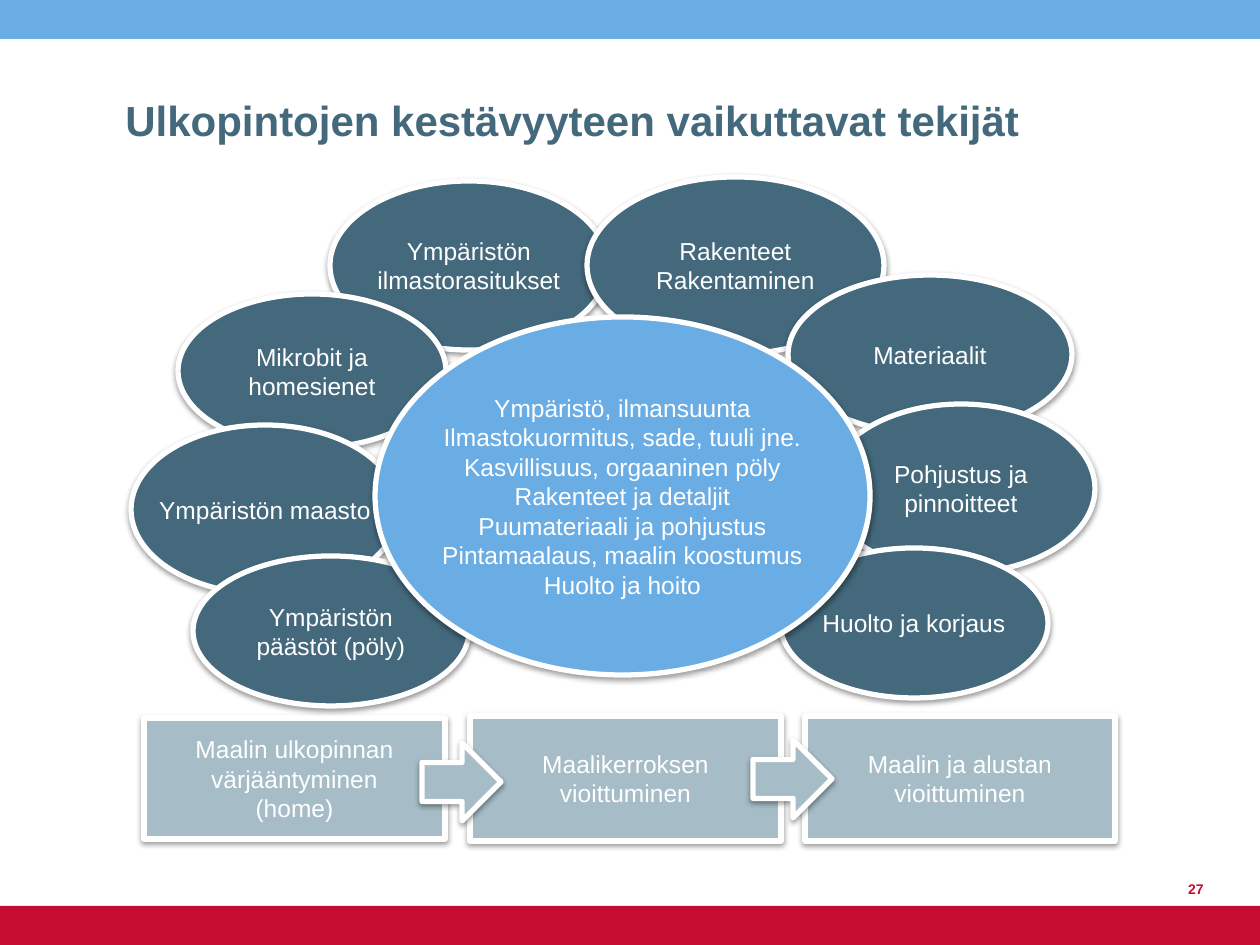
from lxml import etree
from pptx import Presentation
from pptx.dml.color import RGBColor
from pptx.enum.shapes import MSO_SHAPE
from pptx.enum.text import MSO_ANCHOR, PP_ALIGN
from pptx.oxml import parse_xml
from pptx.util import Emu, Pt

RECT, OVAL, ARROW = MSO_SHAPE.RECTANGLE, MSO_SHAPE.OVAL, MSO_SHAPE.RIGHT_ARROW
LEFT, CENTER, RIGHT = PP_ALIGN.LEFT, PP_ALIGN.CENTER, PP_ALIGN.RIGHT
MIDDLE, BOTTOM = MSO_ANCHOR.MIDDLE, MSO_ANCHOR.BOTTOM

PX = 914400 / 126
THEME = {
    "font": "Arial",
    "sky": RGBColor(0x6A, 0xAD, 0xE4),
    "red": RGBColor(0xC6, 0x0C, 0x30),
    "slate": RGBColor(0x44, 0x69, 0x7D),
    "mist": RGBColor(0xA6, 0xBC, 0xC6),
    "white": RGBColor(0xFF, 0xFF, 0xFF),
    "title": 24,
    "body": 14,
    "number": 8,
    "outline": 3,
}
SHADOW = (
    '<a:outerShdw xmlns:a="http://schemas.openxmlformats.org/drawingml/2006/main"'
    ' blurRad="40000" dist="20000" dir="5400000" rotWithShape="0">'
    '<a:srgbClr val="000000"><a:alpha val="38000"/></a:srgbClr></a:outerShdw>'
)

prs = Presentation()
prs.slide_width, prs.slide_height = Emu(round(1260 * PX)), Emu(round(945 * PX))
slide = prs.slides.add_slide(prs.slide_layouts[6])


def write(shape, text, size=THEME["body"], color=THEME["white"], bold=False,
          align=CENTER, anchor=MIDDLE, wrap=False):
    frame = shape.text_frame
    frame.word_wrap = wrap
    frame.vertical_anchor = anchor
    frame.text = text
    for paragraph in frame.paragraphs:
        paragraph.alignment = align
        for run in paragraph.runs:
            run.font.name = THEME["font"]
            run.font.size = Pt(size)
            run.font.bold = bold
            run.font.color.rgb = color


def add_block(kind, box, fill, raised=True):
    shape = slide.shapes.add_shape(kind, *(Emu(round(n * PX)) for n in box))
    shape.fill.solid()
    shape.fill.fore_color.rgb = fill
    shape.shadow.inherit = False
    if raised:
        shape.line.color.rgb = THEME["white"]
        shape.line.width = Pt(THEME["outline"])
        effects = next(shape.element.spPr.iter("{*}effectLst"))
        effects.append(parse_xml(SHADOW))
    else:
        shape.line.fill.background()
    return shape


# Bands at the top and bottom edges
for top, color in ((0, THEME["sky"]), (906, THEME["red"])):
    add_block(RECT, (0, top, 1260, 39), color, raised=False)

# Title and page number
labels = (
    ((113, 45, 1032, 149), "Ulkopintojen kestävyyteen vaikuttavat tekijät",
     THEME["title"], THEME["slate"], LEFT, MIDDLE),
    ((1147, 854, 69, 50), "27", THEME["number"], THEME["red"], RIGHT, BOTTOM),
)
for box, text, size, color, align, anchor in labels:
    label = slide.shapes.add_textbox(*(Emu(round(n * PX)) for n in box))
    write(label, text, size=size, color=color, bold=True, align=align,
          anchor=anchor, wrap=True)

# Stages of damage
stages = (
    ((144, 718, 301, 121), "Maalin ulkopinnan\nvärjääntyminen\v(home)"),
    ((470, 716, 311, 125), "Maalikerroksen\nvioittuminen"),
    ((805, 716, 310, 125), "Maalin ja alustan\nvioittuminen"),
)
for box, text in stages:
    write(add_block(RECT, box, THEME["mist"]), text)

# Factors around the centre
factors = (
    ((330, 181, 278, 169), "Ympäristön\nilmastorasitukset"),
    ((587, 177, 297, 177), "Rakenteet\nRakentaminen"),
    ((178, 294, 268, 154), "Mikrobit ja\nhomesienet"),
    ((131, 425, 268, 169), "Ympäristön maasto"),
    ((193, 556, 276, 150), "Ympäristön\npäästöt (pöly)"),
    ((788, 275, 284, 159), "Materiaalit"),
    ((827, 404, 268, 169), "Pohjustus ja\npinnoitteet"),
    ((780, 548, 268, 150), "Huolto ja korjaus"),
)
for box, text in factors:
    write(add_block(OVAL, box, THEME["slate"]), text)

# Central summary
summary = (
    "Ympäristö, ilmansuunta",
    "Ilmastokuormitus, sade, tuuli jne.",
    "Kasvillisuus, orgaaninen pöly",
    "Rakenteet ja detaljit",
    "Puumateriaali ja pohjustus",
    "Pintamaalaus, maalin koostumus",
    "Huolto ja hoito",
)
write(add_block(OVAL, (375, 317, 495, 358), THEME["sky"]), "\n".join(summary))

# Arrows between the stages
for left, top in ((422, 743), (753, 740)):
    add_block(ARROW, (left, top, 79, 78), THEME["mist"])

prs.save("out.pptx")
